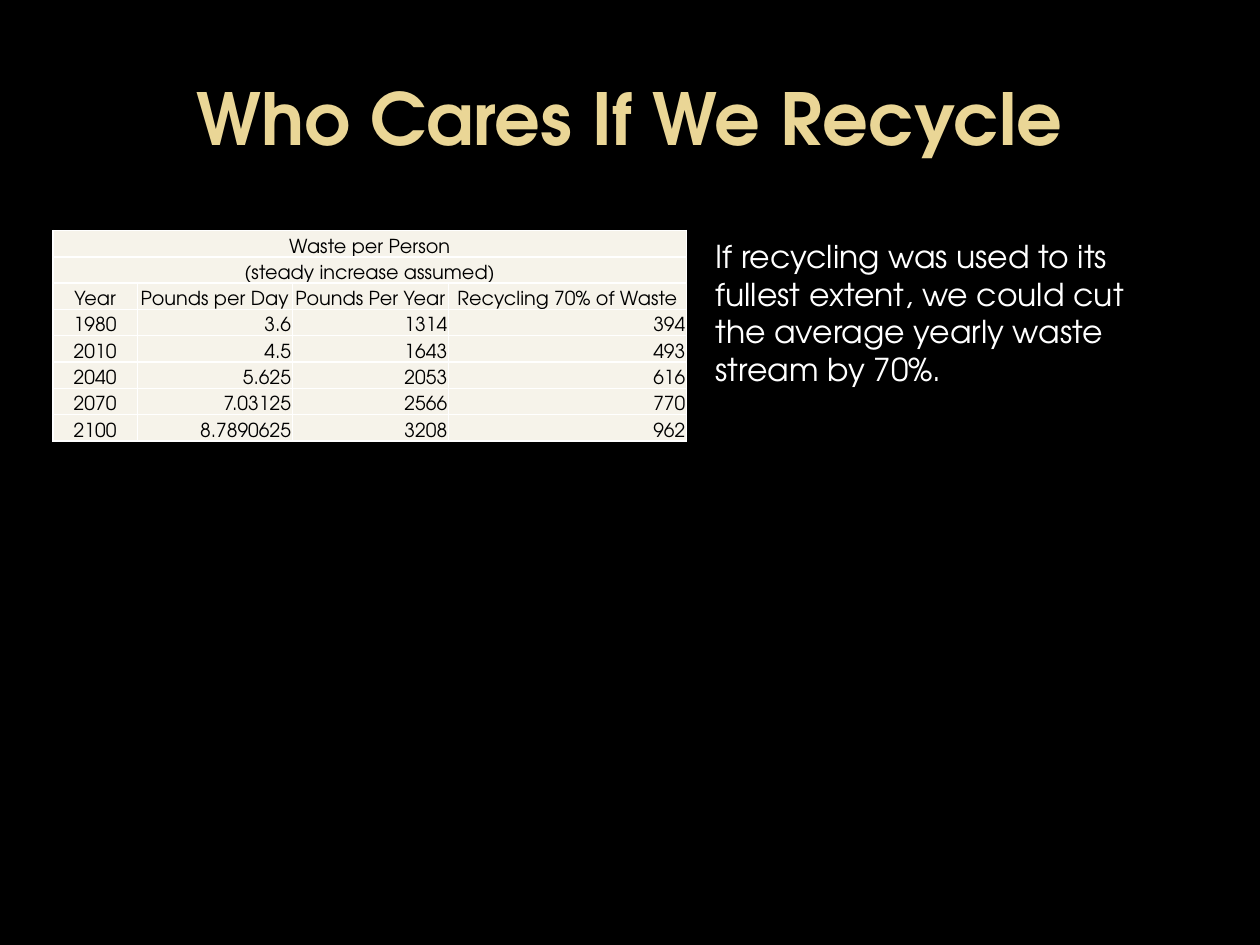
from lxml import etree
from pptx import Presentation
from pptx import util as u
from pptx.dml import color
from pptx.enum import text
from pptx.oxml import ns

FACE = "TeX Gyre Adventor"
HEADINGS = ["Year", "Pounds per Day", "Pounds Per Year", "Recycling 70% of Waste"]
WASTE = [
    ["1980", "3.6", "1314", "394"],
    ["2010", "4.5", "1643", "493"],
    ["2040", "5.625", "2053", "616"],
    ["2070", "7.03125", "2566", "770"],
    ["2100", "8.7890625", "3208", "962"],
]
CAPTIONS = ["Waste per Person", "(steady increase assumed)"]
COLUMN_WIDTHS = [0.67, 1.23, 1.24, 1.89]


def rgb(value):
    """Turn a hex string into a colour."""
    return color.RGBColor.from_string(value)


def set_font(para, size, bold=False):
    """Set the face, size and weight of a paragraph."""
    para.font.name = FACE
    para.font.size = u.Pt(size)
    para.font.bold = bold


def place(shape, box):
    """Move a shape to a box of left, top, width and height in inches."""
    shape.left, shape.top, shape.width, shape.height = map(u.Inches, box)


def add_title(page, box, wording):
    """Fill the title placeholder with gold gradient text."""
    title = page.shapes.title
    place(title, box)
    title.text_frame.text = wording
    title.text_frame.vertical_anchor = text.MSO_ANCHOR.MIDDLE
    para = title.text_frame.paragraphs[0]
    para.alignment = text.PP_ALIGN.CENTER
    set_font(para, 41, True)
    fill = para.font.fill
    fill.gradient()
    fill.gradient_angle = 280
    for stop, position, shade in zip(fill.gradient_stops, (0.73, 1), ("EAD696", "E7D081")):
        stop.position = position
        stop.color.rgb = rgb(shade)


def add_borders(cell, shade):
    """Draw a one-point line on every side of a cell."""
    properties = cell._tc.get_or_add_tcPr()
    for side in ("a:lnL", "a:lnR", "a:lnT", "a:lnB"):
        line = etree.SubElement(properties, ns.qn(side), w=str(u.Pt(1)))
        fill = etree.SubElement(line, ns.qn("a:solidFill"))
        etree.SubElement(fill, ns.qn("a:srgbClr"), val=shade)


def format_cell(cell, wording, alignment):
    """Write and style one table cell."""
    add_borders(cell, "FFFFFF")
    cell.fill.solid()
    cell.fill.fore_color.rgb = rgb("F6F3EA")
    cell.margin_left = cell.margin_right = cell.margin_top = u.Inches(0.01)
    cell.margin_bottom = 0
    cell.vertical_anchor = text.MSO_ANCHOR.BOTTOM
    cell.text = wording
    para = cell.text_frame.paragraphs[0]
    para.alignment = alignment
    set_font(para, 11)
    para.font.color.rgb = rgb("000000")


def add_waste_table(page, box):
    """Add the table of waste per person with its two caption rows."""
    rows = [[caption, "", "", ""] for caption in CAPTIONS] + [HEADINGS] + WASTE
    frame = page.shapes.add_table(len(rows), len(HEADINGS), *map(u.Inches, box))
    table = frame.table
    table.first_row = table.horz_banding = False
    for column, width in zip(table.columns, COLUMN_WIDTHS):
        column.width = u.Inches(width)
    first_data_row = len(CAPTIONS) + 1
    for r, row in enumerate(rows):
        table.rows[r].height = u.Inches(box[3] / len(rows))
        for c, wording in enumerate(row):
            is_number = r >= first_data_row and c > 0
            alignment = text.PP_ALIGN.RIGHT if is_number else text.PP_ALIGN.CENTER
            format_cell(table.cell(r, c), wording, alignment)
    for r in range(len(CAPTIONS)):
        table.cell(r, 0).merge(table.cell(r, len(HEADINGS) - 1))


def add_remark(page, box, wording):
    """Add the white remark beside the table."""
    frame = page.shapes.add_textbox(*map(u.Inches, box)).text_frame
    frame.word_wrap = True
    frame.auto_size = text.MSO_AUTO_SIZE.SHAPE_TO_FIT_TEXT
    frame.text = wording
    para = frame.paragraphs[0]
    set_font(para, 18)
    para.font.color.rgb = rgb("FFFFFF")


def main():
    """Build and save the recycling slide."""
    deck = Presentation()
    deck.slide_width, deck.slide_height = u.Inches(10), u.Inches(7.5)
    page = deck.slides.add_slide(deck.slide_layouts[5])
    page.background.fill.solid()
    page.background.fill.fore_color.rgb = rgb("000000")
    add_title(page, (0.5, 0.3, 9, 1.25), "Who Cares If We Recycle")
    add_waste_table(page, (0.42, 1.83, 5.03, 1.67))
    add_remark(
        page,
        (5.58, 1.83, 3.5, 1.31),
        "If recycling was used to its fullest extent, we could cut "
        "the average yearly waste stream by 70%.",
    )
    deck.save("out.pptx")


if __name__ == "__main__":
    main()
